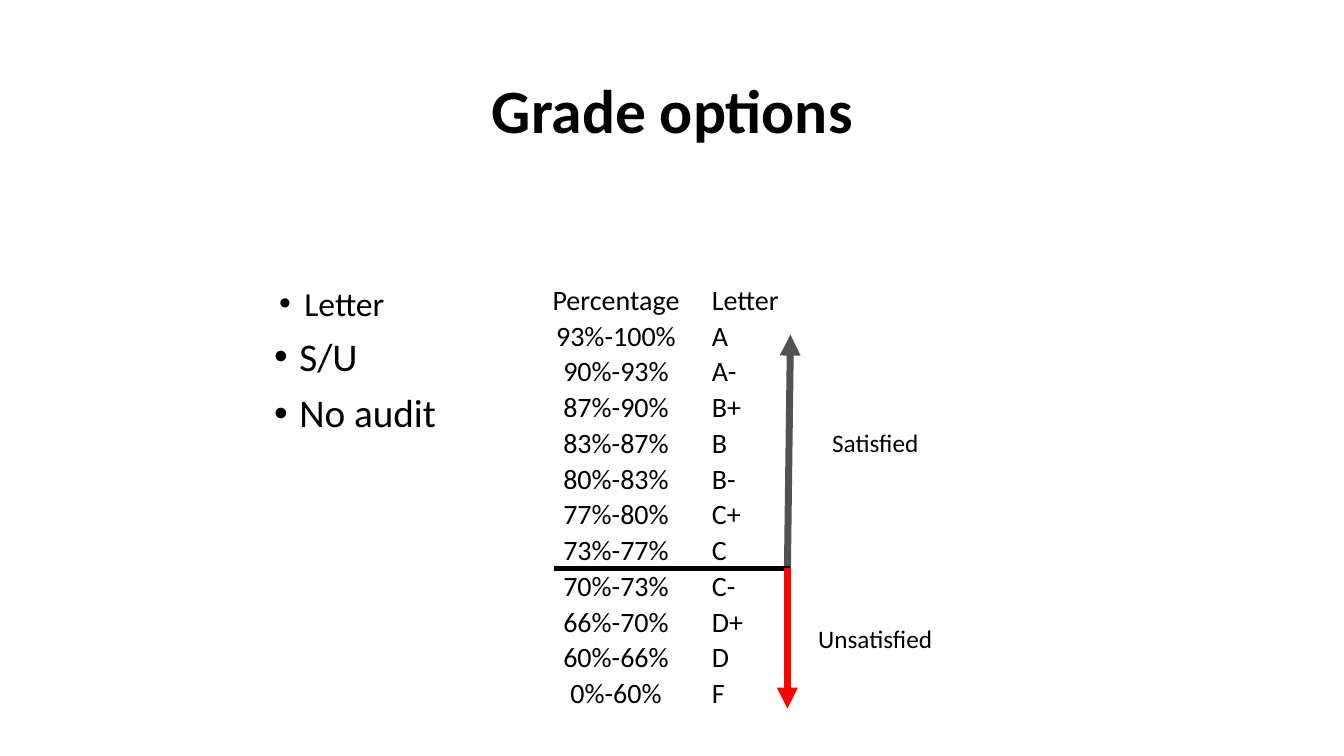
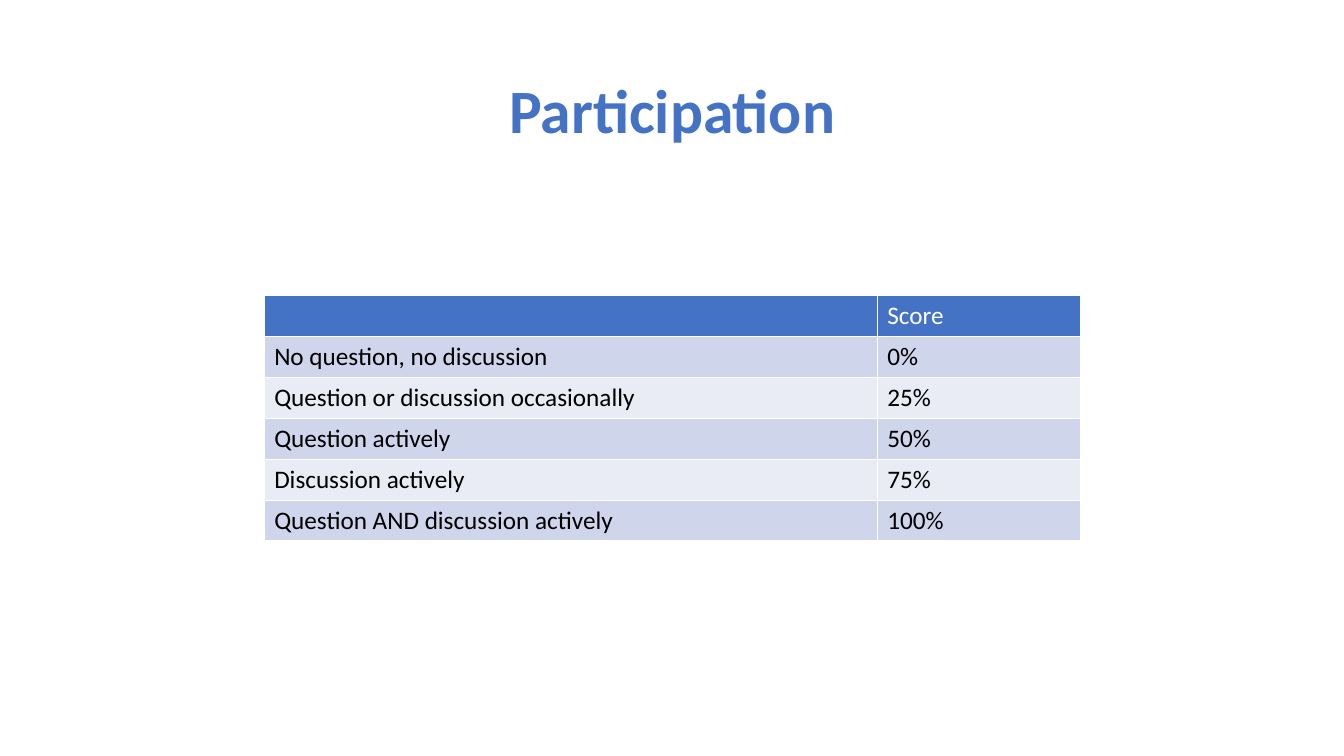
from dataclasses import dataclass

from lxml import etree
from pptx import Presentation
from pptx.dml.color import RGBColor
from pptx.enum.shapes import MSO_CONNECTOR
from pptx.enum.text import MSO_ANCHOR, PP_ALIGN
from pptx.oxml.ns import qn
from pptx.util import Inches, Pt

STRAIGHT = MSO_CONNECTOR.STRAIGHT
MIDDLE, BOTTOM = MSO_ANCHOR.MIDDLE, MSO_ANCHOR.BOTTOM
LEFT, CENTER = PP_ALIGN.LEFT, PP_ALIGN.CENTER


@dataclass(frozen=True)
class Theme:
    font: str = "Calibri"
    black: str = "000000"
    white: str = "FFFFFF"
    blue: str = "4472C4"
    band_dark: str = "CFD5EA"
    band_light: str = "E9EBF5"
    gray: str = "525252"
    red: str = "FF0000"
    title: int = 44
    bullet: int = 28
    sub_bullet: int = 24
    grade: int = 20
    text: int = 18


theme = Theme()


def add_run(p, text, size, color=theme.black, bold=False):
    r = p.add_run()
    r.text = text
    r.font.name = theme.font
    r.font.size = Pt(size)
    r.font.bold = bold
    r.font.color.rgb = RGBColor.from_string(color)


def add_box(slide, left, top, width, height):
    """Add an empty wrapping text box and return its text frame."""
    box = slide.shapes.add_textbox(Inches(left), Inches(top), Inches(width), Inches(height))
    box.text_frame.word_wrap = True
    return box.text_frame


prs = Presentation()
prs.slide_width, prs.slide_height = Inches(13.33), Inches(7.5)

# Titles
slides = []
for title, color in (("Grade options", theme.black), ("Participation", theme.blue)):
    s = prs.slides.add_slide(prs.slide_layouts[6])
    tf = add_box(s, 0.92, 0.4, 11.5, 1.45)
    tf.vertical_anchor = MIDDLE
    p = tf.paragraphs[0]
    p.alignment = CENTER
    p.line_spacing = 0.9
    add_run(p, title, theme.title, color, bold=True)
    slides.append(s)
grade_slide, participation_slide = slides

# Grade options: bullets
tf = add_box(grade_slide, 2.62, 2.8, 2.55, 3.77)
options = [
    ("Letter", theme.sub_bullet, 0.3, 5),
    ("S/U", theme.bullet, 0.25, 10),
    ("No audit", theme.bullet, 0.25, 10),
]
for i, (text, size, indent, before) in enumerate(options):
    p = tf.add_paragraph() if i else tf.paragraphs[0]
    p.line_spacing = 0.9
    p.space_before = Pt(before)
    pPr = p._p.get_or_add_pPr()
    pPr.set("marL", str(Inches(indent)))
    pPr.set("indent", str(Inches(-0.25)))
    etree.SubElement(pPr, qn("a:buFont")).set("typeface", "Arial")
    etree.SubElement(pPr, qn("a:buChar")).set("char", "•")
    add_run(p, text, size)

# Grade options: scale
grades = [
    ("Percentage", "Letter"),
    ("93%-100%", "A"),
    ("90%-93%", "A-"),
    ("87%-90%", "B+"),
    ("83%-87%", "B"),
    ("80%-83%", "B-"),
    ("77%-80%", "C+"),
    ("73%-77%", "C"),
    ("70%-73%", "C-"),
    ("66%-70%", "D+"),
    ("60%-66%", "D"),
    ("0%-60%", "F"),
]
table = grade_slide.shapes.add_table(
    len(grades), 2, Inches(5.17), Inches(2.8), Inches(2.98), Inches(4.26)).table
table.first_row = table.horz_banding = False
table.columns[0].width, table.columns[1].width = Inches(1.88), Inches(1.1)
for i, row in enumerate(grades):
    for j, text in enumerate(row):
        cell = table.cell(i, j)
        cell.fill.background()
        cell.vertical_anchor = BOTTOM
        cell.margin_left = cell.margin_right = cell.margin_top = Inches(0.01)
        cell.margin_bottom = 0
        p = cell.text_frame.paragraphs[0]
        p.alignment = LEFT if j else CENTER
        add_run(p, text, theme.grade)

# Grade options: pass line and arrows
pass_y = 5.64
lines = [
    (7.81, 7.84, 3.32, theme.gray, 5, True),
    (5.49, 7.84, pass_y, theme.black, 3, False),
    (7.81, 7.81, 7.03, theme.red, 5, True),
]
for x1, x2, y2, color, width, arrow in lines:
    line = grade_slide.shapes.add_connector(
        STRAIGHT, Inches(x1), Inches(pass_y), Inches(x2), Inches(y2))
    line.line.color.rgb = RGBColor.from_string(color)
    line.line.width = Pt(width)
    if arrow:
        etree.SubElement(line.line._get_or_add_ln(), qn("a:tailEnd")).set("type", "triangle")
    etree.SubElement(line._element.spPr, qn("a:effectLst"))

for label, top in (("Satisfied", 4.19), ("Unsatisfied", 6.13)):
    p = add_box(grade_slide, 7.94, top, 1.48, 0.4).paragraphs[0]
    p.alignment = CENTER
    add_run(p, label, theme.text)

# Participation: scores
scores = [
    ("", "Score"),
    ("No question, no discussion", "0%"),
    ("Question or discussion occasionally", "25%"),
    ("Question actively", "50%"),
    ("Discussion actively", "75%"),
    ("Question AND discussion actively", "100%"),
]
table = participation_slide.shapes.add_table(
    len(scores), 2, Inches(2.62), Inches(2.93), Inches(8.1), Inches(2.44)).table
table.first_row = table.horz_banding = False
table.columns[0].width, table.columns[1].width = Inches(6.08), Inches(2.02)
for i, row in enumerate(scores):
    if i == 0:
        fill, color = theme.blue, theme.white
    else:
        fill, color = (theme.band_dark if i % 2 else theme.band_light), theme.black
    for j, text in enumerate(row):
        cell = table.cell(i, j)
        tcPr = cell._tc.get_or_add_tcPr()
        for side in ("a:lnL", "a:lnR", "a:lnT", "a:lnB"):
            ln = etree.SubElement(tcPr, qn(side), w=str(Pt(1)))
            solid = etree.SubElement(ln, qn("a:solidFill"))
            etree.SubElement(solid, qn("a:srgbClr")).set("val", theme.white)
        cell.fill.solid()
        cell.fill.fore_color.rgb = RGBColor.from_string(fill)
        if text:
            add_run(cell.text_frame.paragraphs[0], text, theme.text, color)

prs.save("out.pptx")
